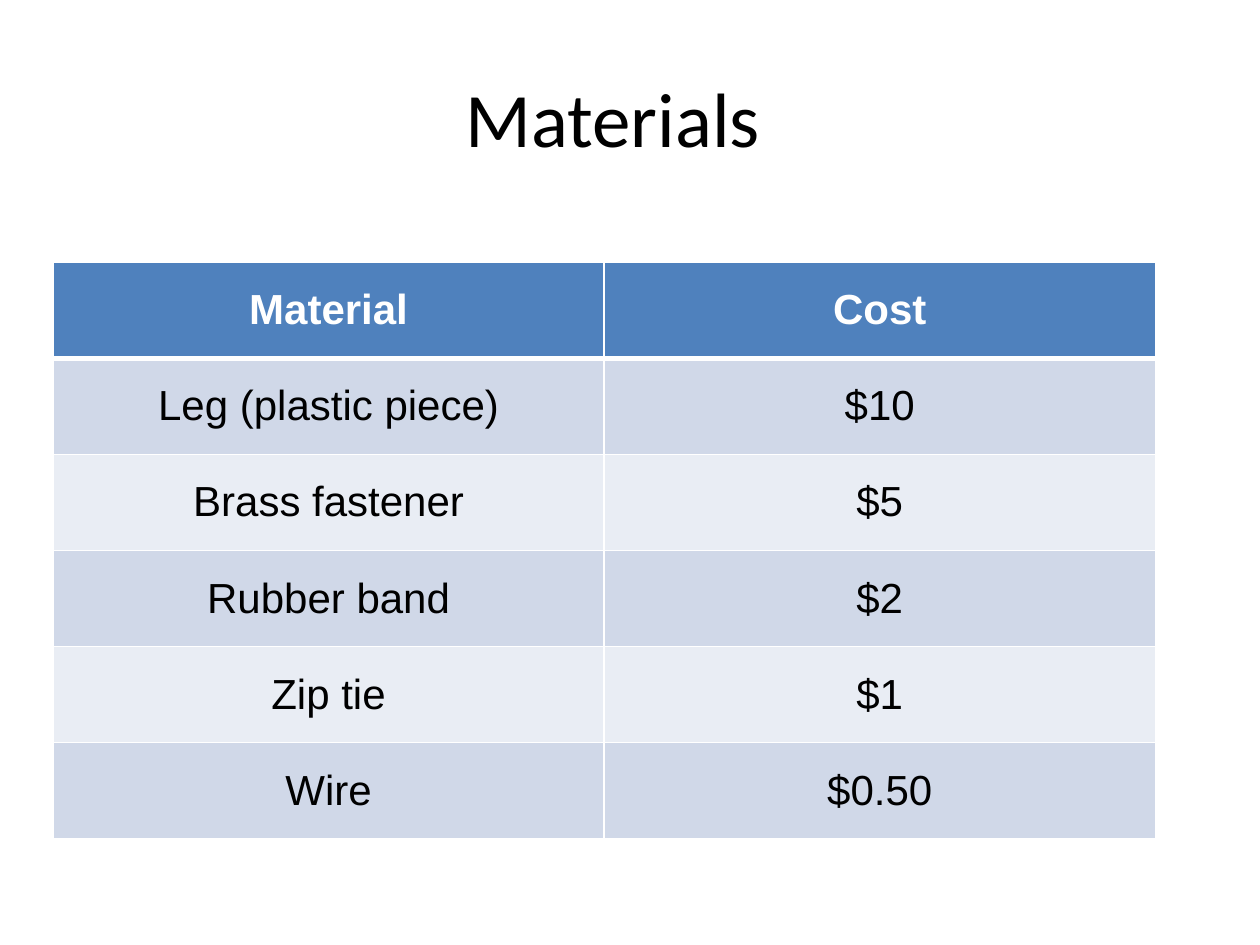
from dataclasses import dataclass

from lxml import etree
from pptx import Presentation
from pptx.dml.color import RGBColor
from pptx.enum.text import MSO_ANCHOR, PP_ALIGN
from pptx.oxml.ns import qn
from pptx.util import Inches, Pt

CENTER = PP_ALIGN.CENTER
MIDDLE = MSO_ANCHOR.MIDDLE
TITLE_ONLY = 5


@dataclass(frozen=True)
class Theme:
    title_font: str = "Calibri"
    table_font: str = "Arial"
    title_size: int = 44
    table_size: int = 24
    text: str = "000000"
    header_text: str = "FFFFFF"
    header_fill: str = "4F81BD"
    band_fills: tuple[str, str] = ("D0D8E8", "E9EDF4")
    border: str = "FFFFFF"
    thin_border: int = 1
    header_border: int = 3


@dataclass(frozen=True)
class Material:
    name: str
    cost: str


THEME = Theme()
HEADINGS = Material("Material", "Cost")
MATERIALS = [
    Material("Leg (plastic piece)", "$10"),
    Material("Brass fastener", "$5"),
    Material("Rubber band", "$2"),
    Material("Zip tie", "$1"),
    Material("Wire", "$0.50"),
]


def add_text(frame, text: str, font: str, size: int, color: str,
             bold: bool = False) -> None:
    paragraph = frame.paragraphs[0]
    paragraph.alignment = CENTER
    run = paragraph.add_run()
    run.text = text
    run.font.name = font
    run.font.size = Pt(size)
    run.font.bold = bold
    run.font.color.rgb = RGBColor.from_string(color)


def add_border(cell, side: str, width: int) -> None:
    properties = cell._tc.get_or_add_tcPr()
    line = etree.SubElement(properties, qn(f"a:ln{side}"), w=str(Pt(width)))
    fill = etree.SubElement(line, qn("a:solidFill"))
    etree.SubElement(fill, qn("a:srgbClr"), val=THEME.border)


def fill_cell(cell, text: str, row: int) -> None:
    is_header = row == 0
    cell.vertical_anchor = MIDDLE
    add_text(cell.text_frame, text, THEME.table_font, THEME.table_size,
             THEME.header_text if is_header else THEME.text, is_header)

    # Borders come before the fill in the cell properties
    thick_side = {0: "B", 1: "T"}.get(row)
    for side in "LRTB":
        add_border(cell, side, THEME.header_border if side == thick_side
                   else THEME.thin_border)
    color = THEME.header_fill if is_header else THEME.band_fills[(row - 1) % 2]
    cell.fill.solid()
    cell.fill.fore_color.rgb = RGBColor.from_string(color)


def add_title(slide, text: str) -> None:
    title = slide.shapes.title
    title.left, title.top = Inches(0.5), Inches(0.3)
    title.width, title.height = Inches(9), Inches(1.25)
    frame = title.text_frame
    frame.vertical_anchor = MIDDLE
    # The wider right inset sets the heading slightly left of centre
    frame.margin_right = Inches(0.37)
    add_text(frame, text, THEME.title_font, THEME.title_size, THEME.text)


def add_cost_table(slide, materials: list[Material]) -> None:
    rows = [HEADINGS, *materials]
    cost_table = slide.shapes.add_table(
        len(rows), 2, Inches(0.42), Inches(2.08), Inches(8.75), Inches(4.58)
    ).table
    for row, material in enumerate(rows):
        for column, text in enumerate((material.name, material.cost)):
            fill_cell(cost_table.cell(row, column), text, row)


def main() -> None:
    presentation = Presentation()
    presentation.slide_width = Inches(10)
    presentation.slide_height = Inches(7.5)
    slide = presentation.slides.add_slide(presentation.slide_layouts[TITLE_ONLY])

    add_title(slide, "Materials")
    add_cost_table(slide, MATERIALS)
    presentation.save("out.pptx")


if __name__ == "__main__":
    main()
